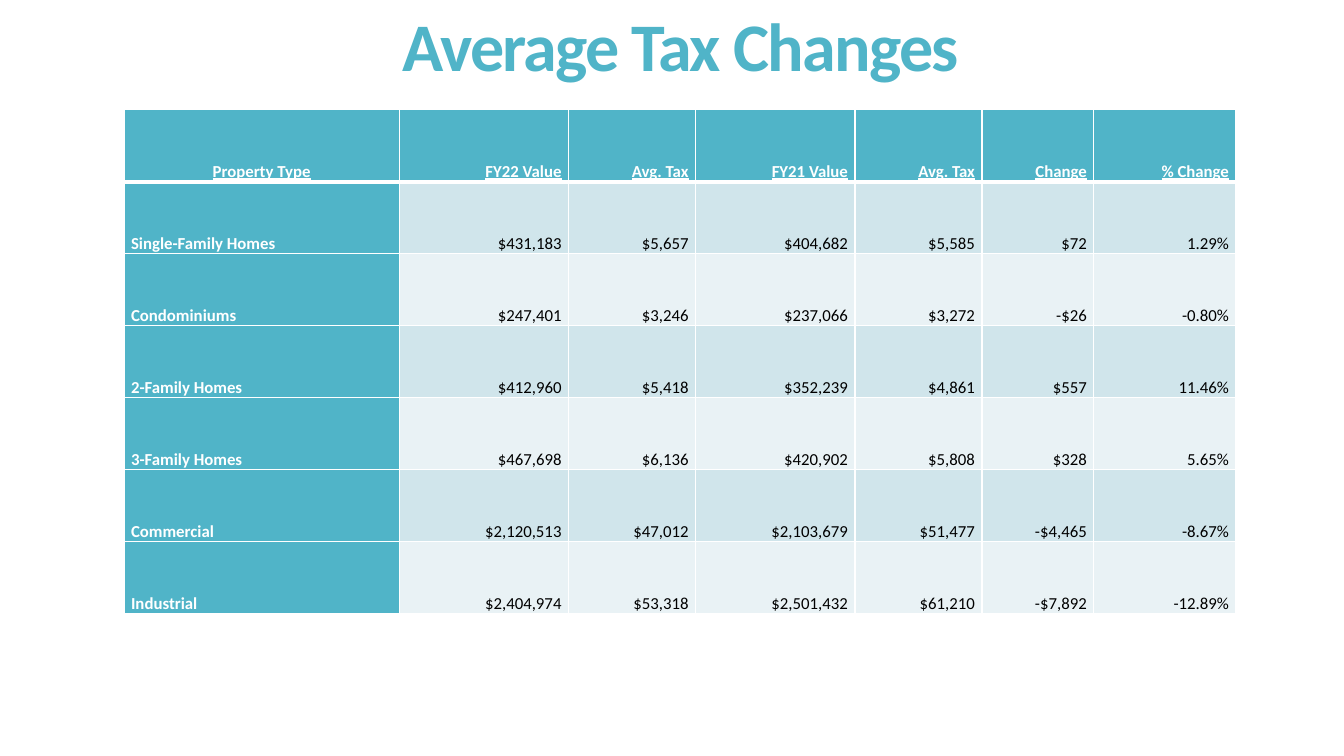
from dataclasses import dataclass

from lxml import etree
from pptx import Presentation
from pptx.dml.color import RGBColor
from pptx.enum.text import MSO_ANCHOR, PP_ALIGN
from pptx.oxml.ns import qn
from pptx.table import _Cell
from pptx.util import Inches, Pt

TEAL = RGBColor(0x50, 0xB4, 0xC8)
PALE = RGBColor(0xD0, 0xE5, 0xEB)
PALER = RGBColor(0xE9, 0xF2, 0xF5)
WHITE = RGBColor(0xFF, 0xFF, 0xFF)
BLACK = RGBColor(0x00, 0x00, 0x00)
LEFT, CENTER, RIGHT = PP_ALIGN.LEFT, PP_ALIGN.CENTER, PP_ALIGN.RIGHT
BOTTOM, MIDDLE = MSO_ANCHOR.BOTTOM, MSO_ANCHOR.MIDDLE
FONT = "Calibri"
THIN, THICK = Pt(1), Pt(3)

COLUMN_WIDTHS = (2.73, 1.68, 1.26, 1.58, 1.26, 1.11, 1.41)
TABLE_HEIGHT = 5
TAX_ROWS = (
    ("Property Type", "FY22 Value", "Avg. Tax", "FY21 Value", "Avg. Tax", "Change", "% Change"),
    ("Single-Family Homes", "$431,183", "$5,657", "$404,682", "$5,585", "$72", "1.29%"),
    ("Condominiums", "$247,401", "$3,246", "$237,066", "$3,272", "-$26", "-0.80%"),
    ("2-Family Homes", "$412,960", "$5,418", "$352,239", "$4,861", "$557", "11.46%"),
    ("3-Family Homes", "$467,698", "$6,136", "$420,902", "$5,808", "$328", "5.65%"),
    ("Commercial", "$2,120,513", "$47,012", "$2,103,679", "$51,477", "-$4,465", "-8.67%"),
    ("Industrial", "$2,404,974", "$53,318", "$2,501,432", "$61,210", "-$7,892", "-12.89%"),
)


@dataclass(frozen=True)
class CellStyle:
    fill: RGBColor
    color: RGBColor
    align: PP_ALIGN
    bold: bool = True
    underline: bool = False
    top: int = THIN
    bottom: int = THIN


def style_at(row: int, column: int) -> CellStyle:
    """Header row, property names in the first column, banded values elsewhere."""
    if row == 0:
        align = RIGHT if column else CENTER
        return CellStyle(TEAL, WHITE, align, underline=True, bottom=THICK)
    top = THICK if row == 1 else THIN
    if column == 0:
        return CellStyle(TEAL, WHITE, LEFT, top=top)
    return CellStyle(PALE if row % 2 else PALER, BLACK, RIGHT, bold=False, top=top)


def set_borders(cell: _Cell, style: CellStyle) -> None:
    properties = cell._tc.get_or_add_tcPr()
    widths = {"lnL": THIN, "lnR": THIN, "lnT": style.top, "lnB": style.bottom}
    for side, width in widths.items():
        line = etree.SubElement(properties, qn(f"a:{side}"), w=str(int(width)))
        fill = etree.SubElement(line, qn("a:solidFill"))
        etree.SubElement(fill, qn("a:srgbClr"), val=str(WHITE))


def fill_cell(cell: _Cell, text: str, style: CellStyle) -> None:
    set_borders(cell, style)
    cell.fill.solid()
    cell.fill.fore_color.rgb = style.fill
    cell.vertical_anchor = BOTTOM
    cell.margin_left = cell.margin_right = Inches(0.07)
    cell.margin_top = cell.margin_bottom = 0
    cell.text = text
    paragraph = cell.text_frame.paragraphs[0]
    paragraph.alignment = style.align
    font = paragraph.font
    font.name, font.size, font.color.rgb = FONT, Pt(12), style.color
    font.bold, font.underline = style.bold, style.underline


def add_title(slide, text: str) -> None:
    title = slide.shapes.add_textbox(Inches(0.75), Inches(0.07), Inches(12), Inches(0.86))
    frame = title.text_frame
    frame.word_wrap = True
    frame.vertical_anchor = MIDDLE
    paragraph = frame.paragraphs[0]
    paragraph.alignment, paragraph.line_spacing = CENTER, 0.85
    font = paragraph.font
    font.name, font.size, font.bold, font.color.rgb = FONT, Pt(48.6), True, TEAL
    run = paragraph.add_run()
    run.text = text
    run._r.get_or_add_rPr().set("spc", "-120")  # tightened letter spacing


def add_tax_table(slide) -> None:
    table = slide.shapes.add_table(
        len(TAX_ROWS), len(COLUMN_WIDTHS), Inches(1.23), Inches(1.09),
        Inches(sum(COLUMN_WIDTHS)), Inches(TABLE_HEIGHT),
    ).table
    table.first_col = True
    for column, width in zip(table.columns, COLUMN_WIDTHS):
        column.width = Inches(width)
    for r, values in enumerate(TAX_ROWS):
        for c, value in enumerate(values):
            fill_cell(table.cell(r, c), value, style_at(r, c))


def main() -> None:
    deck = Presentation()
    deck.slide_width, deck.slide_height = Inches(13.33), Inches(7.5)
    slide = deck.slides.add_slide(deck.slide_layouts[6])
    add_title(slide, "Average Tax Changes")
    add_tax_table(slide)
    deck.save("out.pptx")


if __name__ == "__main__":
    main()
